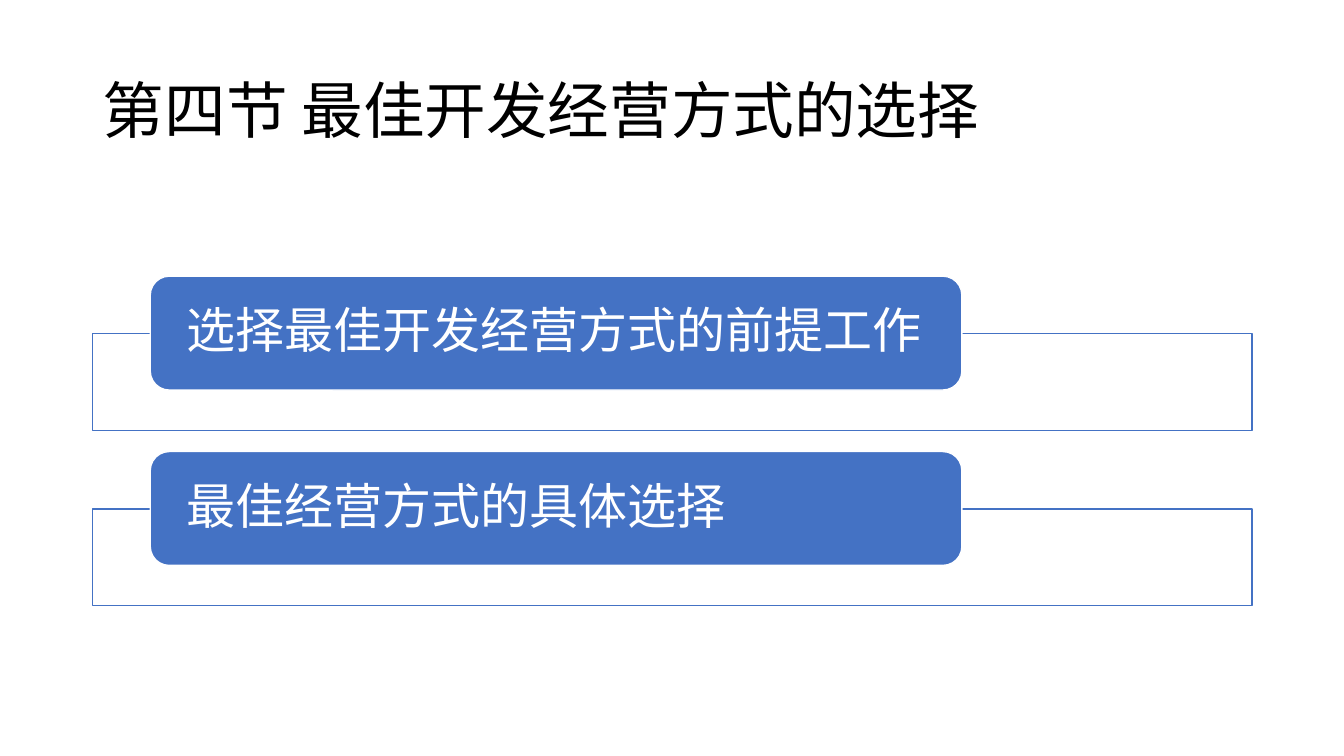
from lxml.etree import SubElement
from pptx import Presentation
from pptx.dml.color import RGBColor
from pptx.enum.shapes import MSO_SHAPE
from pptx.enum.text import MSO_ANCHOR, MSO_AUTO_SIZE, PP_ALIGN
from pptx.oxml.ns import qn
from pptx.util import Inches, Pt

COLOURS = {"black": "000000", "white": "FFFFFF", "blue": "4472C4"}
FONT = "Noto Sans CJK SC"
TOPICS = ["选择最佳开发经营方式的前提工作", "最佳经营方式的具体选择"]
FRAME_FORMAT = {
    "word_wrap": True,
    "auto_size": MSO_AUTO_SIZE.NONE,
    "vertical_anchor": MSO_ANCHOR.MIDDLE,
}
LABEL_MARGINS = {
    "margin_left": Inches(0.3),
    "margin_right": Inches(0.3),
    "margin_top": 0,
    "margin_bottom": 0,
}


def write_text(shape, text, size, colour, frame_format):
    for name, value in frame_format.items():
        setattr(shape.text_frame, name, value)
    paragraph = shape.text_frame.paragraphs[0]
    paragraph.alignment = PP_ALIGN.LEFT
    paragraph.line_spacing = 0.9
    run = paragraph.add_run()
    run.text = text
    run.font.size = Pt(size)
    run.font.name = FONT
    run.font.color.rgb = RGBColor.from_string(COLOURS[colour])
    SubElement(run.font._element, qn("a:ea"), typeface=FONT)


def add_box(slide, kind, bounds, fill, line):
    shape = slide.shapes.add_shape(kind, *[Inches(length) for length in bounds])
    shape.shadow.inherit = False
    shape.fill.solid()
    shape.fill.fore_color.rgb = RGBColor.from_string(COLOURS[fill])
    shape.line.color.rgb = RGBColor.from_string(COLOURS[line])
    shape.line.width = Pt(1)
    return shape


presentation = Presentation()
presentation.slide_width = Inches(13.33)
presentation.slide_height = Inches(7.5)
slide = presentation.slides.add_slide(presentation.slide_layouts[5])

title = slide.shapes.title
title_bounds = {"left": 0.92, "top": 0.4, "width": 11.5, "height": 1.45}
for name, value in title_bounds.items():
    setattr(title, name, Inches(value))
write_text(title, "第四节 最佳开发经营方式的选择", 44, "black", FRAME_FORMAT)

for index, topic in enumerate(TOPICS):
    label_top = 2.74 + index * 1.74
    panel = add_box(slide, MSO_SHAPE.RECTANGLE, (0.92, label_top + 0.57, 11.5, 0.96), "white", "blue")
    panel_colour = panel.fill._xPr.find(qn("a:solidFill"))[0]
    SubElement(panel_colour, qn("a:alpha"), val="90000")
    label = add_box(slide, MSO_SHAPE.ROUNDED_RECTANGLE, (1.49, label_top, 8.05, 1.13), "blue", "white")
    write_text(label, topic, 35, "white", FRAME_FORMAT | LABEL_MARGINS)

presentation.save("out.pptx")
